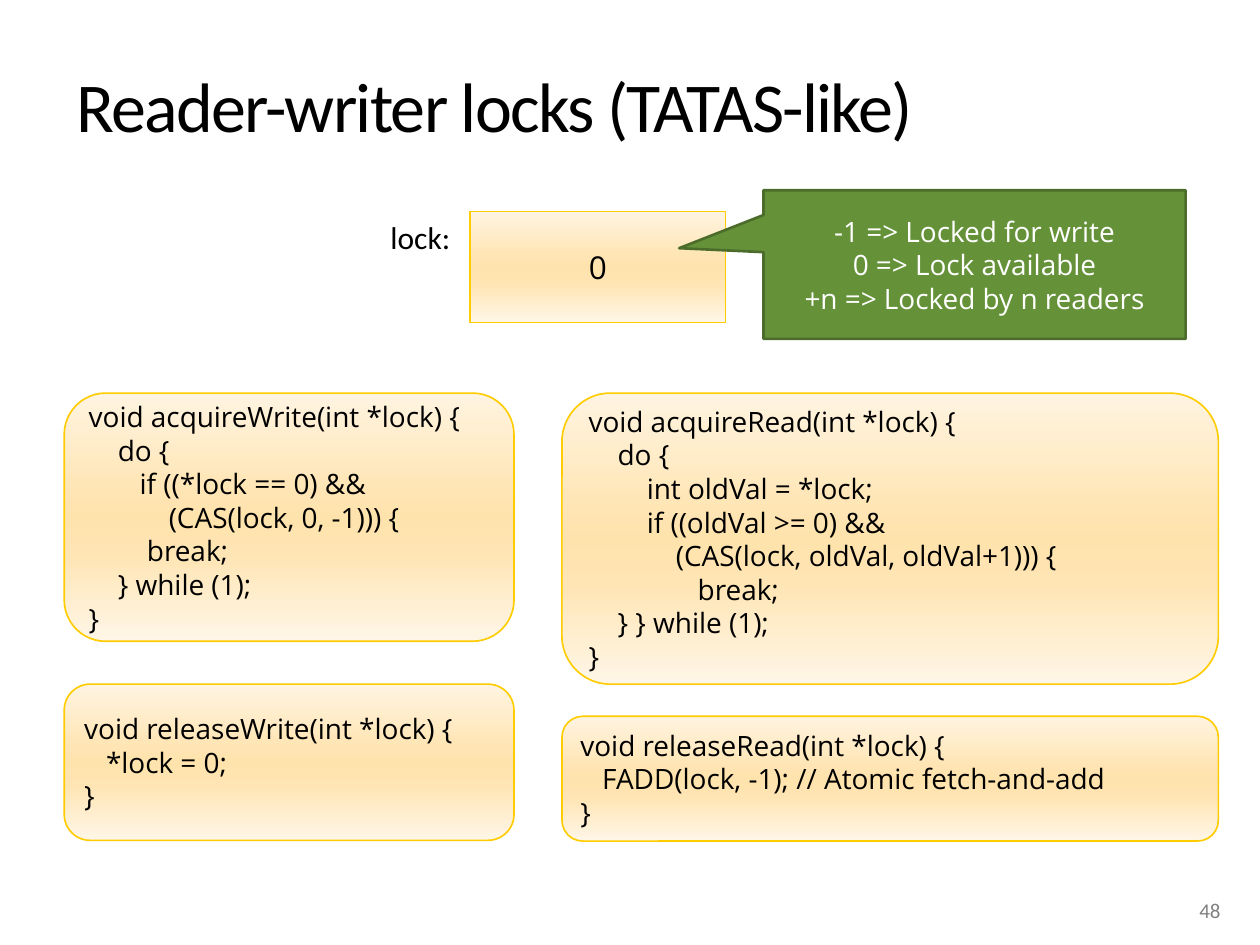
from dataclasses import dataclass, field
from typing import NamedTuple

import pptx
import pptx.dml.color
import pptx.enum.shapes
import pptx.enum.text
import pptx.oxml
import pptx.oxml.ns
import pptx.util
from lxml import etree

Pt = pptx.util.Pt
RGB = pptx.dml.color.RGBColor.from_string
Shape = pptx.enum.shapes.MSO_SHAPE
Align = pptx.enum.text.PP_ALIGN
Anchor = pptx.enum.text.MSO_ANCHOR
qn = pptx.oxml.ns.qn


@dataclass(frozen=True)
class Theme:
    ink: str = "000000"
    muted: str = "808080"
    light: str = "FFFFFF"
    gold: str = "FFCC00"
    green: str = "659239"
    dark_green: str = "4B6C2A"
    cream_stops: tuple = ((0, "FFF4E1"), (40, "FFE5B4"), (50, "FFE3AD"),
                          (65, "FFE5B4"), (100, "FFF6E7"))
    heading_font: str = "Calibri"
    code_font: str = "Open Sans"
    title_size: float = 40
    label_size: float = 18
    code_size: float = 16
    number_size: float = 12
    space_width: float = 0.26  # width of a code-font space, in ems


THEME = Theme()


class Box(NamedTuple):
    left: float
    top: float
    width: float
    height: float


class Line(NamedTuple):
    text: str
    indent: int = 0  # in spaces


@dataclass(frozen=True)
class Style:
    font: str
    size: float
    color: str = THEME.ink
    paragraph: dict = field(default_factory=dict)


@dataclass(frozen=True)
class CodeBlock:
    box: Box
    lines: tuple


CODE = Style(THEME.code_font, THEME.code_size, paragraph={"alignment": Align.LEFT})
CENTERED = {"alignment": Align.CENTER}

LEFT_COLUMN, LEFT_WIDTH = 36.72, 257.04
RIGHT_COLUMN, RIGHT_WIDTH = 321.12, 375.12
CODE_TOP = 224.64

CODE_BLOCKS = (
    CodeBlock(Box(LEFT_COLUMN, CODE_TOP, LEFT_WIDTH, 141.84), (
        Line("void acquireWrite(int *lock) {"),
        Line("do {", 4),
        Line("if ((*lock == 0) &&", 7),
        Line("(CAS(lock, 0, -1))) {", 11),
        Line("break;", 8),
        Line("} while (1);", 4),
        Line("}"))),
    CodeBlock(Box(LEFT_COLUMN, 390.96, LEFT_WIDTH, 89.28), (
        Line("void releaseWrite(int *lock) {"),
        Line("*lock = 0;", 3),
        Line("}"))),
    CodeBlock(Box(RIGHT_COLUMN, CODE_TOP, RIGHT_WIDTH, 166.32), (
        Line("void acquireRead(int *lock) {"),
        Line("do {", 4),
        Line("int oldVal = *lock;", 8),
        Line("if ((oldVal >= 0) &&", 8),
        Line("(CAS(lock, oldVal, oldVal+1))) {", 12),
        Line("break;", 15),
        Line("} } while (1);", 4),
        Line("}"))),
    CodeBlock(Box(RIGHT_COLUMN, 409.32, RIGHT_WIDTH, 71.28), (
        Line("void releaseRead(int *lock) {"),
        Line("FADD(lock, -1); // Atomic fetch-and-add", 3),
        Line("}"))),
)


def set_all(target, values: dict) -> None:
    for name, value in values.items():
        setattr(target, name, value)


def write(frame, lines: tuple, style: Style, **frame_format) -> None:
    set_all(frame, {"word_wrap": True, **frame_format})
    for index, line in enumerate(lines):
        paragraph = frame.add_paragraph() if index else frame.paragraphs[0]
        set_all(paragraph, style.paragraph)
        if line.indent:
            margin = Pt(line.indent * THEME.space_width * style.size)
            paragraph._p.get_or_add_pPr().set("marL", str(int(margin)))
        run = paragraph.add_run()
        run.text = line.text
        set_all(run.font, {"name": style.font, "size": Pt(style.size)})
        run.font.color.rgb = RGB(style.color)


def add_text(slide, box: Box, text: str, style: Style, **frame_format):
    label = slide.shapes.add_textbox(*map(Pt, box))
    write(label.text_frame, (Line(text),), style, **frame_format)
    return label


def add_panel(slide, kind, box: Box, outline: str, weight: float):
    panel = slide.shapes.add_shape(kind, *map(Pt, box))
    panel.shadow.inherit = False
    panel.line.color.rgb = RGB(outline)
    panel.line.width = Pt(weight)
    return panel


def add_cream_panel(slide, kind, box: Box, lines: tuple, style: Style) -> None:
    """Add a gold-edged panel with a vertical cream gradient."""
    panel = add_panel(slide, kind, box, THEME.gold, 0.94)
    panel.fill.gradient()
    panel.fill.gradient_angle = 270
    stops = panel._element.spPr.find(".//" + qn("a:gsLst"))
    for old_stop in list(stops):
        stops.remove(old_stop)
    for percent, color in THEME.cream_stops:
        stop = etree.SubElement(stops, qn("a:gs"), pos=str(percent * 1000))
        etree.SubElement(stop, qn("a:srgbClr"), val=color)
    write(panel.text_frame, lines, style, vertical_anchor=Anchor.MIDDLE)


def add_callout(slide) -> None:
    callout = add_panel(slide, Shape.RECTANGULAR_CALLOUT,
                        Box(436.32, 108.72, 241.2, 84.96), THEME.dark_green, 1.5)
    callout.adjustments[0] = -0.7
    callout.adjustments[1] = -0.11
    callout.fill.solid()
    callout.fill.fore_color.rgb = RGB(THEME.green)
    states = (Line("-1 => Locked for write"),
              Line("0 => Lock available"),
              Line("+n => Locked by n readers"))
    write(callout.text_frame, states,
          Style(THEME.code_font, THEME.code_size, THEME.light, CENTERED),
          vertical_anchor=Anchor.MIDDLE)


def main() -> None:
    deck = pptx.Presentation()
    set_all(deck, {"slide_width": Pt(720), "slide_height": Pt(540)})
    slide = deck.slides.add_slide(deck.slide_layouts[6])

    title = add_text(slide, Box(36.72, 40.32, 635.04, 59.76),
                     "Reader-writer locks (TATAS-like)",
                     Style(THEME.heading_font, THEME.title_size,
                           paragraph={"line_spacing": Pt(40)}))
    title.text_frame.paragraphs[0].runs[0]._r.get_or_add_rPr().set("spc", "-100")
    add_text(slide, Box(678.24, 501.84, 36, 28.8), "48",
             Style(THEME.heading_font, THEME.number_size, THEME.muted),
             vertical_anchor=Anchor.BOTTOM)

    add_cream_panel(slide, Shape.RECTANGLE, Box(268.56, 120.96, 146.16, 63.36),
                    (Line("0"),),
                    Style(THEME.code_font, THEME.label_size, paragraph=CENTERED))
    add_text(slide, Box(216, 120.96, 48.96, 28.8), "lock:",
             Style(THEME.heading_font, THEME.label_size), word_wrap=False,
             auto_size=pptx.enum.text.MSO_AUTO_SIZE.SHAPE_TO_FIT_TEXT)
    add_callout(slide)
    for block in CODE_BLOCKS:
        add_cream_panel(slide, Shape.ROUNDED_RECTANGLE, block.box, block.lines, CODE)

    deck.save("out.pptx")


if __name__ == "__main__":
    main()
